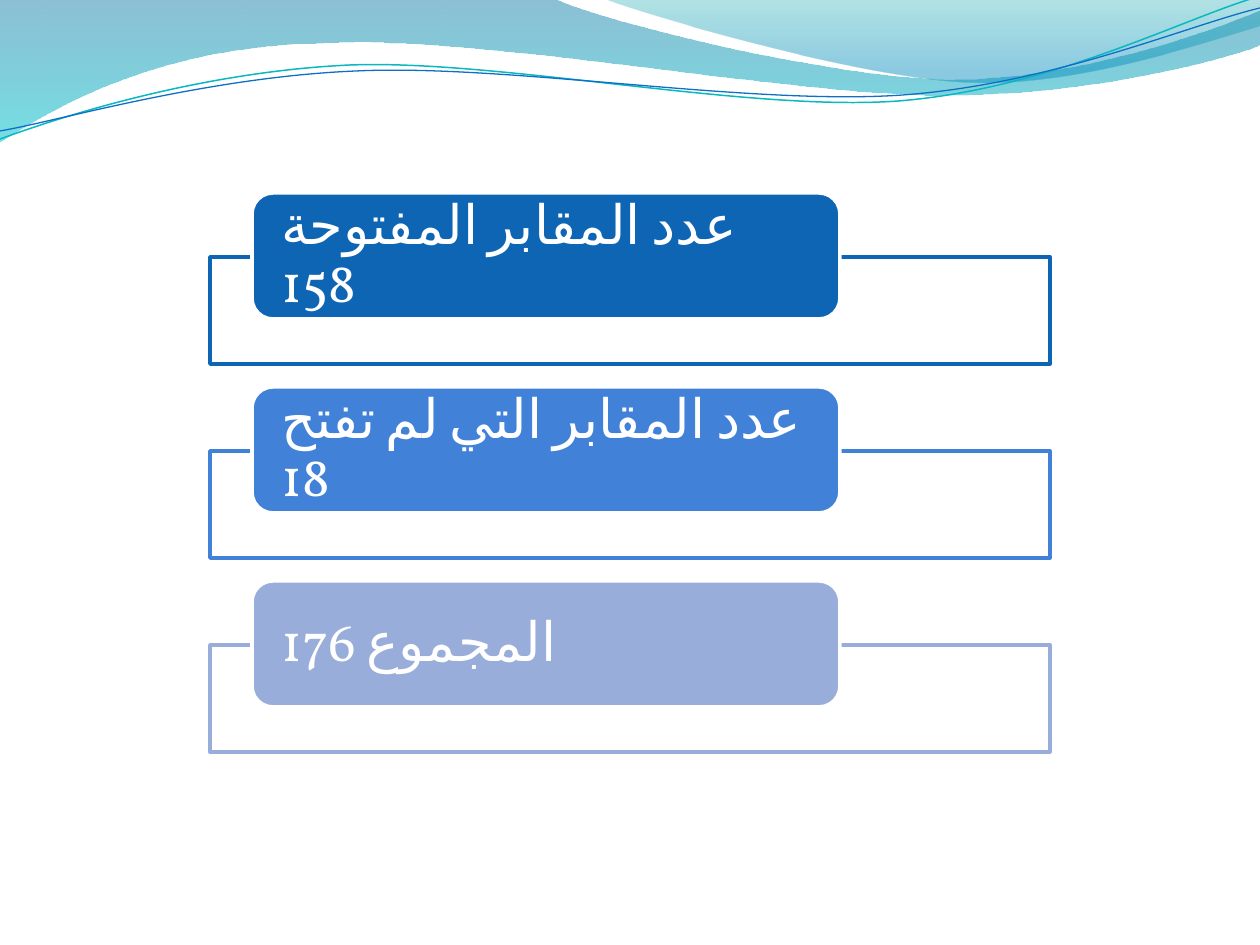
import dataclasses

import lxml.etree
import pptx
import pptx.dml.color
import pptx.enum.lang
import pptx.enum.shapes
import pptx.enum.text
import pptx.oxml.ns
import pptx.util

PX = 914400 / 126
SHAPE = pptx.enum.shapes.MSO_SHAPE


@dataclasses.dataclass(frozen=True)
class Theme:
    white: str = "FFFFFF"
    deep_wave: tuple = ((0, "0074A1", 45), (1, "00C6CF", 55))
    light_wave: tuple = ((0, "00A1A9", 30), (0.8, "008BBF", 45))
    teal_strand: str = "0AB8BF"
    blue_strand: str = "0F6FC6"
    cards: tuple = ("0E65B4", "4181D8", "98ADD9")
    font: str = "Vollkorn"
    label_size: int = 31
    border: float = 2


THEME = Theme()

COUNTS = ("عدد المقابر المفتوحة 158", "عدد المقابر التي لم تفتح 18", "المجموع 176")

DEEP_WAVE = [
    (0, 0), (555, -1),
    ((600, 21), (837, 79), (955, 79)),
    ((1075, 79), (1207, 33), (1260, 11)),
    (1261, 45),
    ((1239, 55), (1096, 96), (940, 95)),
    ((784, 95), (481, 35), (324, 43)),
    ((163, 45), (58, 105), (-1, 142)),
]
LIGHT_WAVE = [
    (604, -1),
    ((641, 14), (859, 78), (969, 82)),
    ((1077, 87), (1211, 40), (1260, 26)),
    (1260, 0),
]
TEAL_STRAND = [
    (0, 139),
    ((60, 117), (199, 72), (349, 65)),
    ((498, 59), (747, 112), (898, 101)),
    ((1050, 89), (1182, 19), (1257, -3)),
]
BLUE_STRAND = [
    (0, 131),
    ((59, 121), (207, 77), (357, 71)),
    ((508, 64), (752, 106), (903, 95)),
    ((1053, 84), (1186, 26), (1260, 8)),
]


def px(length):
    """Turn pixels into EMU."""
    return pptx.util.Emu(round(length * PX))


def rgb(code):
    """Return the colour for a hex code."""
    return pptx.dml.color.RGBColor.from_string(code)


def set_opacity(properties, percents):
    """Give each solid or gradient colour of a fill its opacity."""
    colors = properties.iter(pptx.oxml.ns.qn("a:srgbClr"))
    for color, percent in zip(colors, percents):
        alpha = lxml.etree.SubElement(color, pptx.oxml.ns.qn("a:alpha"))
        alpha.set("val", str(percent * 1000))


def is_bend(part):
    """Tell whether an outline part is a cubic curve."""
    return isinstance(part[0], tuple)


def bend_segments(curve, parts):
    """Join the segments of each cubic part into one curve command."""
    segments = iter(list(curve._element.iter(pptx.oxml.ns.qn("a:lnTo"))))
    for part in parts:
        segment = next(segments)
        if is_bend(part):
            segment.addprevious(bend := segment.makeelement(pptx.oxml.ns.qn("a:cubicBezTo")))
            for control in (segment, next(segments), next(segments)):
                bend.append(control[0])
                control.getparent().remove(control)


def add_curve(slide, outline, closed):
    """Add a freeform that follows an outline of corners and curves."""
    start, *parts = outline
    points = [point for part in parts for point in (part if is_bend(part) else (part,))]
    builder = slide.shapes.build_freeform(*start, scale=PX)
    builder.add_line_segments(points, close=closed)
    curve = builder.convert_to_shape()
    bend_segments(curve, parts)
    curve.shadow.inherit = False
    return curve


def add_wave(slide, outline, stops):
    """Add a translucent wave shaded from top to bottom."""
    wave = add_curve(slide, outline, closed=True)
    wave.line.fill.background()
    wave.fill.gradient()
    wave.fill.gradient_angle = 270
    for stop, (position, color, _) in zip(wave.fill.gradient_stops, stops):
        stop.position = position
        stop.color.rgb = rgb(color)
    set_opacity(wave._element.spPr, [opacity for _, _, opacity in stops])


def add_strand(slide, outline, color, width):
    """Add a thin curved line."""
    strand = add_curve(slide, outline, closed=False)
    strand.fill.background()
    strand.line.color.rgb = rgb(color)
    strand.line.width = pptx.util.Pt(width)


def add_box(slide, kind, bounds, fill, border):
    """Add a filled and bordered preset shape."""
    box = slide.shapes.add_shape(kind, *map(px, bounds))
    box.shadow.inherit = False
    box.fill.solid()
    box.fill.fore_color.rgb = rgb(fill)
    box.line.color.rgb = rgb(border)
    box.line.width = pptx.util.Pt(THEME.border)
    return box


def set_arabic(font):
    """Set the typeface and language for right-to-left script."""
    font.name = THEME.font
    font.language_id = pptx.enum.lang.MSO_LANGUAGE_ID.ARABIC
    script = lxml.etree.SubElement(font._element, pptx.oxml.ns.qn("a:cs"))
    script.set("typeface", THEME.font)


def add_count(slide, top, wording, color):
    """Add one frame with its overlapping label."""
    frame = add_box(slide, SHAPE.RECTANGLE, (210, top + 64, 840, 107), THEME.white, color)
    set_opacity(frame._element.spPr, [90])
    label = add_box(slide, SHAPE.ROUNDED_RECTANGLE, (252, top, 588, 126), color, THEME.white)
    text = label.text_frame
    text.word_wrap = True
    text.vertical_anchor = pptx.enum.text.MSO_ANCHOR.MIDDLE
    text.margin_left = text.margin_right = px(23)
    text.margin_top = text.margin_bottom = 0
    paragraph = text.paragraphs[0]
    paragraph.text = wording
    paragraph.alignment = pptx.enum.text.PP_ALIGN.LEFT
    paragraph.line_spacing = 0.9
    paragraph._p.get_or_add_pPr().set("rtl", "1")
    paragraph.font.size = pptx.util.Pt(THEME.label_size)
    paragraph.font.color.rgb = rgb(THEME.white)
    set_arabic(paragraph.runs[0].font)


def main():
    """Build the slide and save it."""
    deck = pptx.Presentation()
    deck.slide_width, deck.slide_height = px(1260), px(945)
    slide = deck.slides.add_slide(deck.slide_layouts[6])
    add_wave(slide, DEEP_WAVE, THEME.deep_wave)
    add_wave(slide, LIGHT_WAVE, THEME.light_wave)
    add_strand(slide, TEAL_STRAND, THEME.teal_strand, 0.85)
    add_strand(slide, BLUE_STRAND, THEME.blue_strand, 0.75)
    for row, (wording, color) in enumerate(zip(COUNTS, THEME.cards)):
        add_count(slide, 193 + 194 * row, wording, color)
    deck.save("out.pptx")


if __name__ == "__main__":
    main()
